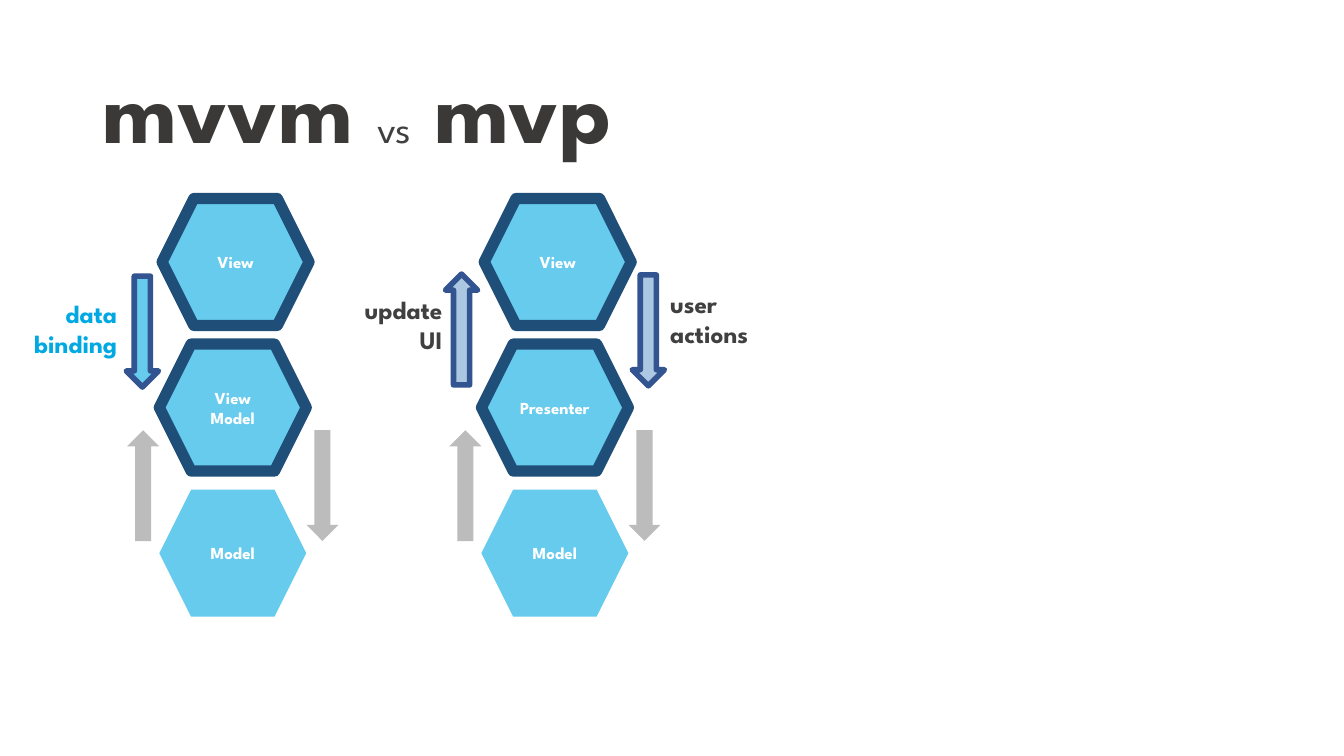
"""Build a slide that compares the mvvm and mvp patterns."""
from dataclasses import dataclass
from typing import Optional

import lxml.etree
import pptx
import pptx.dml.color
import pptx.enum.shapes
import pptx.enum.text
import pptx.oxml.ns
import pptx.util

Pt = pptx.util.Pt
Preset = pptx.enum.shapes.MSO_SHAPE
Align = pptx.enum.text.PP_ALIGN
Anchor = pptx.enum.text.MSO_ANCHOR
AutoSize = pptx.enum.text.MSO_AUTO_SIZE


@dataclass(frozen=True)
class Theme:
    font: str = "League Spartan"
    cyan: str = "00A9E2"
    navy: str = "1F4E79"
    indigo: str = "325491"
    blue: str = "2E75B6"
    grey: str = "595959"
    ink: str = "404040"
    heading: str = "3B3838"
    white: str = "FFFFFF"
    title_size: float = 66
    versus_size: float = 28
    label_size: float = 18
    node_size: float = 12


THEME = Theme()


@dataclass(frozen=True)
class Box:
    left: float
    top: float
    width: float
    height: float

    def lengths(self) -> list[pptx.util.Length]:
        return [Pt(value) for value in (self.left, self.top, self.width, self.height)]


@dataclass(frozen=True)
class Figure:
    preset: Preset
    box: Box
    fill: str
    opacity: int
    line: Optional[str] = None
    line_width: float = 0
    text: str = ""


@dataclass(frozen=True)
class Label:
    lines: tuple[str, ...]
    box: Box
    color: str
    align: Align


@dataclass(frozen=True)
class TitlePart:
    text: str
    size: float
    color: str
    bold: bool


HEX_WIDTH, HEX_HEIGHT = 105, 90.7
HEX_TOP, HEX_STEP = 141.8, 104
ARROW_WIDTH, ARROW_HEIGHT = 23, 79.2
COLUMNS = {113.8: ("View", "View\vModel", "Model"), 343.9: ("View", "Presenter", "Model")}

LABELS = [
    Label(("data", "binding"), Box(9.4, 209.5, 81.4, 51.1), THEME.cyan, Align.RIGHT),
    Label(("update", "UI"), Box(242.6, 206.6, 80.6, 51.1), THEME.ink, Align.RIGHT),
    Label(("user", "actions"), Box(471.6, 202.3, 78.5, 51.1), THEME.ink, Align.LEFT),
]

TITLE_PARTS = [
    TitlePart("mvvm ", THEME.title_size, THEME.heading, True),
    TitlePart("vs", THEME.versus_size, THEME.ink, False),
    TitlePart(" ", THEME.title_size, THEME.ink, False),
    TitlePart("mvp", THEME.title_size, THEME.heading, True),
]


def rgb(color: str) -> pptx.dml.color.RGBColor:
    return pptx.dml.color.RGBColor.from_string(color)


def apply_format(target: object, values: dict[str, object]) -> None:
    for name, value in values.items():
        setattr(target, name, value)


def format_font(font: "pptx.text.text.Font", size: float, color: str, bold: bool = True) -> None:
    apply_format(font, {"name": THEME.font, "size": Pt(size), "bold": bold})
    font.color.rgb = rgb(color)


def arrow(preset: Preset, left: float, top: float, fill: str, opacity: int,
          line: Optional[str] = None) -> Figure:
    box = Box(left, top, ARROW_WIDTH, ARROW_HEIGHT)
    return Figure(preset, box, fill, opacity, line, 4 if line else 0)


def column_figures(left: float, names: tuple[str, ...]) -> list[Figure]:
    figures = []
    for row, name in enumerate(names):
        box = Box(left + (2 if row == 0 else 0), HEX_TOP + row * HEX_STEP, HEX_WIDTH, HEX_HEIGHT)
        outline = (THEME.navy, 8) if row < 2 else (None, 0)
        figures.append(Figure(Preset.HEXAGON, box, THEME.cyan, 60, *outline, name))
    figures.append(arrow(Preset.UP_ARROW, left - ARROW_WIDTH, 307.4, THEME.grey, 40))
    figures.append(arrow(Preset.DOWN_ARROW, left + HEX_WIDTH, 307.2, THEME.grey, 40))
    return figures


def draw_figure(slide: pptx.slide.Slide, figure: Figure) -> None:
    shape = slide.shapes.add_shape(figure.preset, *figure.box.lengths())
    shape.shadow.inherit = False
    shape.fill.solid()
    shape.fill.fore_color.rgb = rgb(figure.fill)
    color = shape.element.spPr.find(".//" + pptx.oxml.ns.qn("a:srgbClr"))
    alpha = lxml.etree.SubElement(color, pptx.oxml.ns.qn("a:alpha"))
    alpha.set("val", str(figure.opacity * 1000))
    if figure.line:
        shape.line.color.rgb = rgb(figure.line)
        shape.line.width = Pt(figure.line_width)
    else:
        shape.line.fill.background()
    if figure.text:
        shape.text_frame.text = figure.text
        shape.text_frame.vertical_anchor = Anchor.MIDDLE
        paragraph = shape.text_frame.paragraphs[0]
        paragraph.alignment = Align.CENTER
        for run in paragraph.runs:
            format_font(run.font, THEME.node_size, THEME.white)


def draw_label(slide: pptx.slide.Slide, label: Label) -> None:
    frame = slide.shapes.add_textbox(*label.box.lengths()).text_frame
    apply_format(frame, {"word_wrap": False, "auto_size": AutoSize.SHAPE_TO_FIT_TEXT})
    frame.text = "\n".join(label.lines)
    for paragraph in frame.paragraphs:
        paragraph.alignment = label.align
        format_font(paragraph.runs[0].font, THEME.label_size, label.color)


def draw_title(slide: pptx.slide.Slide) -> None:
    title = slide.shapes.title
    places = ("left", "top", "width", "height")
    apply_format(title, dict(zip(places, Box(66.2, 28.8, 828, 104.4).lengths())))
    apply_format(title.text_frame, {
        "word_wrap": True, "auto_size": AutoSize.NONE, "vertical_anchor": Anchor.MIDDLE})
    paragraph = title.text_frame.paragraphs[0]
    apply_format(paragraph, {"alignment": Align.LEFT, "line_spacing": 0.9})
    for part in TITLE_PARTS:
        run = paragraph.add_run()
        run.text = part.text
        format_font(run.font, part.size, part.color, part.bold)


def main() -> None:
    presentation = pptx.Presentation()
    presentation.slide_width, presentation.slide_height = Pt(960), Pt(540)
    slide = presentation.slides.add_slide(presentation.slide_layouts[5])
    draw_title(slide)
    figures = [figure for left, names in COLUMNS.items() for figure in column_figures(left, names)]
    figures += [
        arrow(Preset.DOWN_ARROW, 90.2, 197.3, THEME.cyan, 60, THEME.indigo),
        arrow(Preset.UP_ARROW, 318.2, 195.8, THEME.blue, 40, THEME.indigo),
        arrow(Preset.DOWN_ARROW, 451.6, 196.4, THEME.blue, 40, THEME.indigo),
    ]
    for figure in figures:
        draw_figure(slide, figure)
    for label in LABELS:
        draw_label(slide, label)
    presentation.save("out.pptx")


if __name__ == "__main__":
    main()
